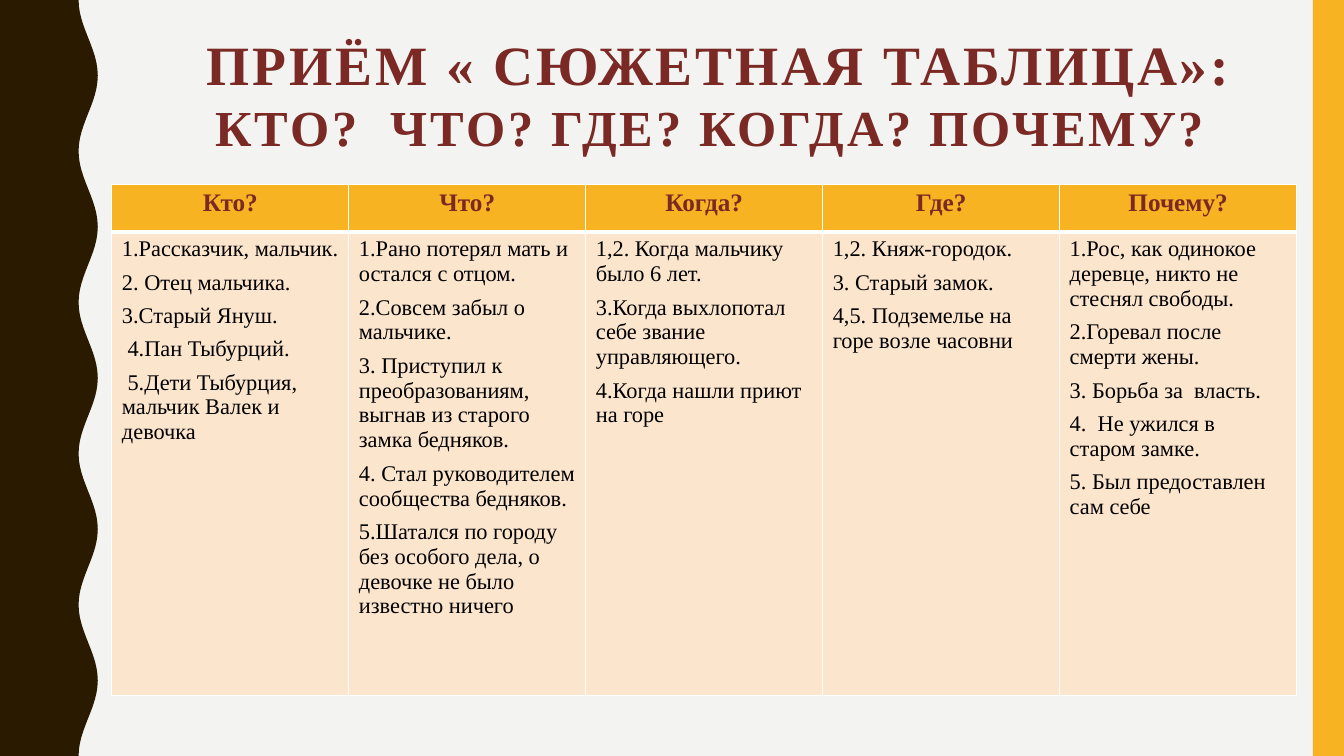
from math import cos, pi

from lxml.etree import SubElement
from pptx import Presentation
from pptx.dml.color import RGBColor
from pptx.enum.shapes import MSO_SHAPE
from pptx.enum.text import MSO_ANCHOR, PP_ALIGN
from pptx.oxml.ns import qn
from pptx.util import Inches, Pt

FONT = "Times New Roman"
DARK, GOLD, RED, PEACH = "2A1A00", "F8B323", "7A2924", "FCE5CD"
WHITE, BLACK, PAPER = "FFFFFF", "000000", "F3F3F2"

TITLE_LINES = [(" ПРИЁМ « СЮЖЕТНАЯ ТАБЛИЦА»:", 39.6), ("КТО?  ЧТО? ГДЕ? КОГДА? ПОЧЕМУ?", 36)]

PLOT_COLUMNS = {
    "Кто?": [
        "1.Рассказчик, мальчик.",
        "2. Отец мальчика.",
        "3.Старый Януш.",
        " 4.Пан Тыбурций.",
        " 5.Дети Тыбурция, мальчик Валек и девочка",
    ],
    "Что?": [
        "1.Рано потерял мать и остался с отцом.",
        "2.Совсем забыл о мальчике.",
        "3. Приступил к преобразованиям, выгнав из старого замка бедняков.",
        "4. Стал руководителем сообщества бедняков.",
        "5.Шатался по городу без особого дела, о девочке не было известно ничего",
    ],
    "Когда?": [
        "1,2. Когда мальчику было 6 лет.",
        "3.Когда выхлопотал себе звание управляющего.",
        "4.Когда нашли приют на горе",
    ],
    "Где?": [
        "1,2. Княж-городок.",
        "3. Старый замок.",
        "4,5. Подземелье на горе возле часовни",
    ],
    "Почему?": [
        "1.Рос, как одинокое деревце, никто не стеснял свободы.",
        "2.Горевал после смерти жены.",
        "3. Борьба за  власть.",
        "4.  Не ужился в старом замке.",
        "5. Был предоставлен сам себе",
    ],
}


def color(value):
    """Turn a hex string into a colour."""
    return RGBColor.from_string(value)


class SlideBuilder:
    """Holds the font and the current slide, and adds styled elements."""

    def __init__(self, slide, font):
        """Keep the slide and font, and paint the background."""
        self.slide = slide
        self.font = font
        slide.background.fill.solid()
        slide.background.fill.fore_color.rgb = color(PAPER)

    def paint(self, shape, fill):
        """Give a shape a flat fill without line or shadow."""
        shape.shadow.inherit = False
        shape.fill.solid()
        shape.fill.fore_color.rgb = color(fill)
        shape.line.fill.background()

    def wave(self, middle, swing, period, height, fill):
        """Draw a left band whose right edge is a cosine wave."""
        steps = 120
        heights = [height * step / steps for step in range(steps + 1)]
        edge = [(Inches(middle - swing * cos(2 * pi * y / period)), Inches(y)) for y in heights]
        builder = self.slide.shapes.build_freeform(0, 0)
        builder.add_line_segments(edge + [(0, Inches(height))], close=True)
        self.paint(builder.convert_to_shape(), fill)

    def band(self, left, top, width, height, fill):
        """Draw a plain rectangle."""
        place = [Inches(value) for value in (left, top, width, height)]
        self.paint(self.slide.shapes.add_shape(MSO_SHAPE.RECTANGLE, *place), fill)

    def style(self, paragraph, size, fill, bold):
        """Set the font of a paragraph."""
        font = paragraph.font
        font.name, font.size, font.bold = self.font, Pt(size), bold
        font.color.rgb = color(fill)

    def title(self, left, top, width, height, lines):
        """Place the title and write one paragraph per line."""
        title = self.slide.shapes.title
        title.left, title.top = Inches(left), Inches(top)
        title.width, title.height = Inches(width), Inches(height)
        frame = title.text_frame
        frame.word_wrap = True
        frame.vertical_anchor = MSO_ANCHOR.MIDDLE
        frame.text = "\n".join(text for text, size in lines)
        for paragraph, (text, size) in zip(frame.paragraphs, lines):
            paragraph.alignment = PP_ALIGN.CENTER
            paragraph.line_spacing = Pt(43)
            paragraph.space_before = Pt(0)
            self.style(paragraph, size, RED, True)
            for run in paragraph.runs:
                run.font._element.set("spc", "200")

    def borders(self, cell, top, bottom):
        """Draw white borders around a cell."""
        properties = cell._tc.get_or_add_tcPr()
        for side, width in (("L", 1), ("R", 1), ("T", top), ("B", bottom)):
            line = SubElement(properties, qn(f"a:ln{side}"), w=str(Pt(width)))
            fill = SubElement(line, qn("a:solidFill"))
            SubElement(fill, qn("a:srgbClr"), val=WHITE)

    def cell(self, cell, lines, fill, header):
        """Fill and write one table cell."""
        self.borders(cell, 1 if header else 3, 3 if header else 1)
        cell.fill.solid()
        cell.fill.fore_color.rgb = color(fill)
        cell.text = "\n".join(lines)
        for index, paragraph in enumerate(cell.text_frame.paragraphs):
            paragraph.alignment = PP_ALIGN.CENTER if header else PP_ALIGN.LEFT
            paragraph.space_before = Pt(6 if index else 0)
            self.style(paragraph, 18 if header else 16, RED if header else BLACK, header)

    def table(self, left, top, column_width, row_heights, columns):
        """Add a table with a heading over each column of lines."""
        place = [left, top, column_width * len(columns), sum(row_heights)]
        shape = self.slide.shapes.add_table(2, len(columns), *[Inches(value) for value in place])
        table = shape.table
        for row, height in zip(table.rows, row_heights):
            row.height = Inches(height)
        for index, (heading, lines) in enumerate(columns.items()):
            table.columns[index].width = Inches(column_width)
            self.cell(table.cell(0, index), [heading], GOLD, True)
            self.cell(table.cell(1, index), lines, PEACH, False)


def main():
    """Build and save the slide."""
    presentation = Presentation()
    presentation.slide_width, presentation.slide_height = Inches(13.33), Inches(7.5)
    slide = presentation.slides.add_slide(presentation.slide_layouts[5])
    builder = SlideBuilder(slide, FONT)
    builder.wave(0.875, 0.095, 1.5, 7.5, DARK)
    builder.band(13.02, 0, 0.31, 7.5, GOLD)
    builder.title(1.09, 0.27, 11.91, 1.38, TITLE_LINES)
    builder.table(1.11, 1.83, 2.35, [0.47, 4.6], PLOT_COLUMNS)
    presentation.save("out.pptx")


if __name__ == "__main__":
    main()
